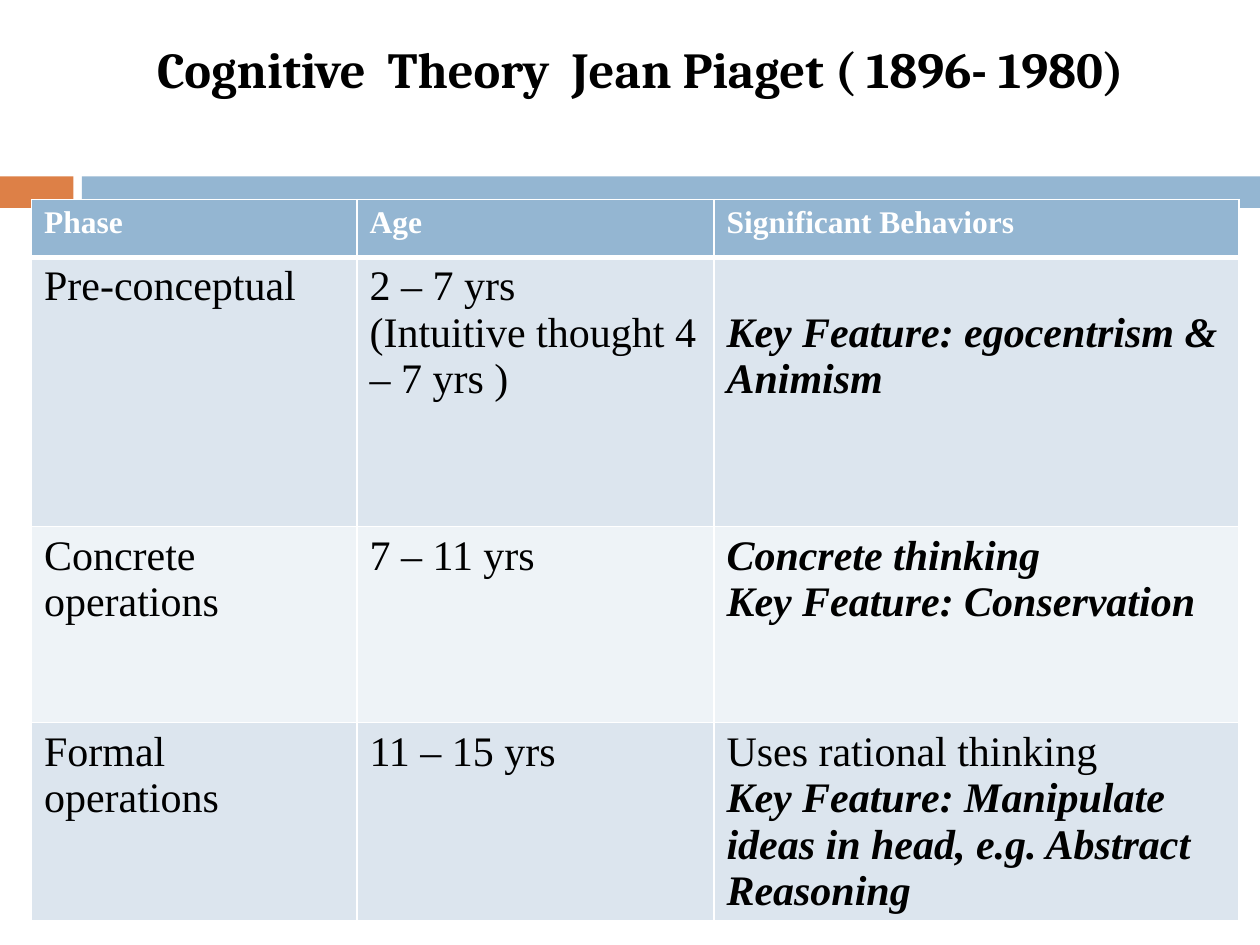
from dataclasses import dataclass

import lxml.etree
import pptx
import pptx.dml.color
import pptx.enum.shapes
import pptx.enum.text
import pptx.oxml.ns
import pptx.util

Pt = pptx.util.Pt


@dataclass(frozen=True)
class Theme:
    orange: str = "DD8047"
    blue: str = "94B6D2"
    band_dark: str = "DCE5EE"
    band_light: str = "EEF3F7"
    white: str = "FFFFFF"
    black: str = "000000"
    title_font: str = "Cambria"
    table_font: str = "Times New Roman"
    title_size: float = 28.8
    header_size: float = 18
    body_size: float = 24


@dataclass(frozen=True)
class Bar:
    left: float
    width: float
    color: str


@dataclass(frozen=True)
class Line:
    text: str
    key: bool = False  # bold italic key feature


@dataclass(frozen=True)
class Phase:
    name: str
    ages: tuple[str, ...]
    behaviors: tuple[Line, ...]
    height: float
    behaviors_top: float = 3.6


THEME = Theme()
BARS = (Bar(0, 42, THEME.orange), Bar(46.8, 673.2, THEME.blue))
HEADERS = ("Phase", "Age", "Significant Behaviors")
HEADER_HEIGHT = 33
COLUMN_WIDTHS = (186, 204, 300)
PHASES = (
    Phase("Pre-conceptual", ("2 – 7 yrs", "(Intuitive thought 4 – 7 yrs )"),
          (Line("Key Feature: egocentrism & Animism", True),), 154, 30.2),
    Phase("Concrete operations", ("7 – 11 yrs",),
          (Line("Concrete thinking", True),
           Line("Key Feature: Conservation", True)), 112),
    Phase("Formal operations", ("11 – 15 yrs",),
          (Line("Uses rational thinking"),
           Line("Key Feature: Manipulate ideas in head, e.g. Abstract Reasoning", True)), 112),
)


def rgb(color: str) -> pptx.dml.color.RGBColor:
    return pptx.dml.color.RGBColor.from_string(color)


def format_runs(para, font: str, size: float, color: str,
                bold: bool = False, italic: bool = False) -> None:
    for span in para.runs:
        span.font.name = font
        span.font.size = Pt(size)
        span.font.bold = bold
        span.font.italic = italic
        span.font.color.rgb = rgb(color)


def draw_bar(page, bar: Bar) -> None:
    box = page.shapes.add_shape(pptx.enum.shapes.MSO_SHAPE.RECTANGLE,
                                Pt(bar.left), Pt(100.8), Pt(bar.width), Pt(18))
    box.shadow.inherit = False
    box.fill.solid()
    box.fill.fore_color.rgb = rgb(bar.color)
    box.line.fill.background()


def set_borders(cell, top: float, bottom: float) -> None:
    properties = cell._tc.get_or_add_tcPr()
    qn = pptx.oxml.ns.qn
    for side, width in (("L", 1), ("R", 1), ("T", top), ("B", bottom)):
        line = lxml.etree.SubElement(properties, qn(f"a:ln{side}"), w=str(Pt(width)))
        fill = lxml.etree.SubElement(line, qn("a:solidFill"))
        lxml.etree.SubElement(fill, qn("a:srgbClr"), val=THEME.white)


def fill_cell(cell, lines: tuple[Line, ...], fill: str, top: float = 1,
              bottom: float = 1, header: bool = False) -> None:
    set_borders(cell, top, bottom)
    cell.fill.solid()
    cell.fill.fore_color.rgb = rgb(fill)
    cell.text_frame.text = "\n".join(line.text for line in lines)
    size = THEME.header_size if header else THEME.body_size
    color = THEME.white if header else THEME.black
    for para, line in zip(cell.text_frame.paragraphs, lines):
        para.alignment = pptx.enum.text.PP_ALIGN.LEFT
        format_runs(para, THEME.table_font, size, color, header or line.key, line.key)


def draw_title(page) -> None:
    title = page.shapes.title
    title.left, title.top, title.width, title.height = Pt(24), Pt(18), Pt(684), Pt(78)
    frame = title.text_frame
    frame.text = "Cognitive  Theory  Jean Piaget ( 1896- 1980)"
    frame.vertical_anchor = pptx.enum.text.MSO_ANCHOR.TOP
    frame.auto_size = pptx.enum.text.MSO_AUTO_SIZE.NONE
    para = frame.paragraphs[0]
    para.alignment = pptx.enum.text.PP_ALIGN.CENTER
    format_runs(para, THEME.title_font, THEME.title_size, THEME.black, bold=True)


def draw_phase_table(page) -> None:
    heights = [HEADER_HEIGHT] + [phase.height for phase in PHASES]
    table = page.shapes.add_table(len(heights), len(HEADERS), Pt(18), Pt(114),
                                  Pt(sum(COLUMN_WIDTHS)), Pt(sum(heights))).table
    for column, width in zip(table.columns, COLUMN_WIDTHS):
        column.width = Pt(width)
    for row, height in zip(table.rows, heights):
        row.height = Pt(height)

    # Header row
    for index, header in enumerate(HEADERS):
        fill_cell(table.cell(0, index), (Line(header),), THEME.blue, bottom=3, header=True)

    # One banded row per phase
    for number, phase in enumerate(PHASES, start=1):
        fill = THEME.band_dark if number % 2 else THEME.band_light
        contents = ((Line(phase.name),), tuple(Line(age) for age in phase.ages),
                    phase.behaviors)
        for index, lines in enumerate(contents):
            fill_cell(table.cell(number, index), lines, fill, top=3 if number == 1 else 1)
        table.cell(number, 2).margin_top = Pt(phase.behaviors_top)


def main() -> None:
    deck = pptx.Presentation()
    deck.slide_width, deck.slide_height = Pt(720), Pt(540)
    page = deck.slides.add_slide(deck.slide_layouts[5])
    draw_title(page)
    for bar in BARS:
        draw_bar(page, bar)
    draw_phase_table(page)
    deck.save("out.pptx")


if __name__ == "__main__":
    main()
